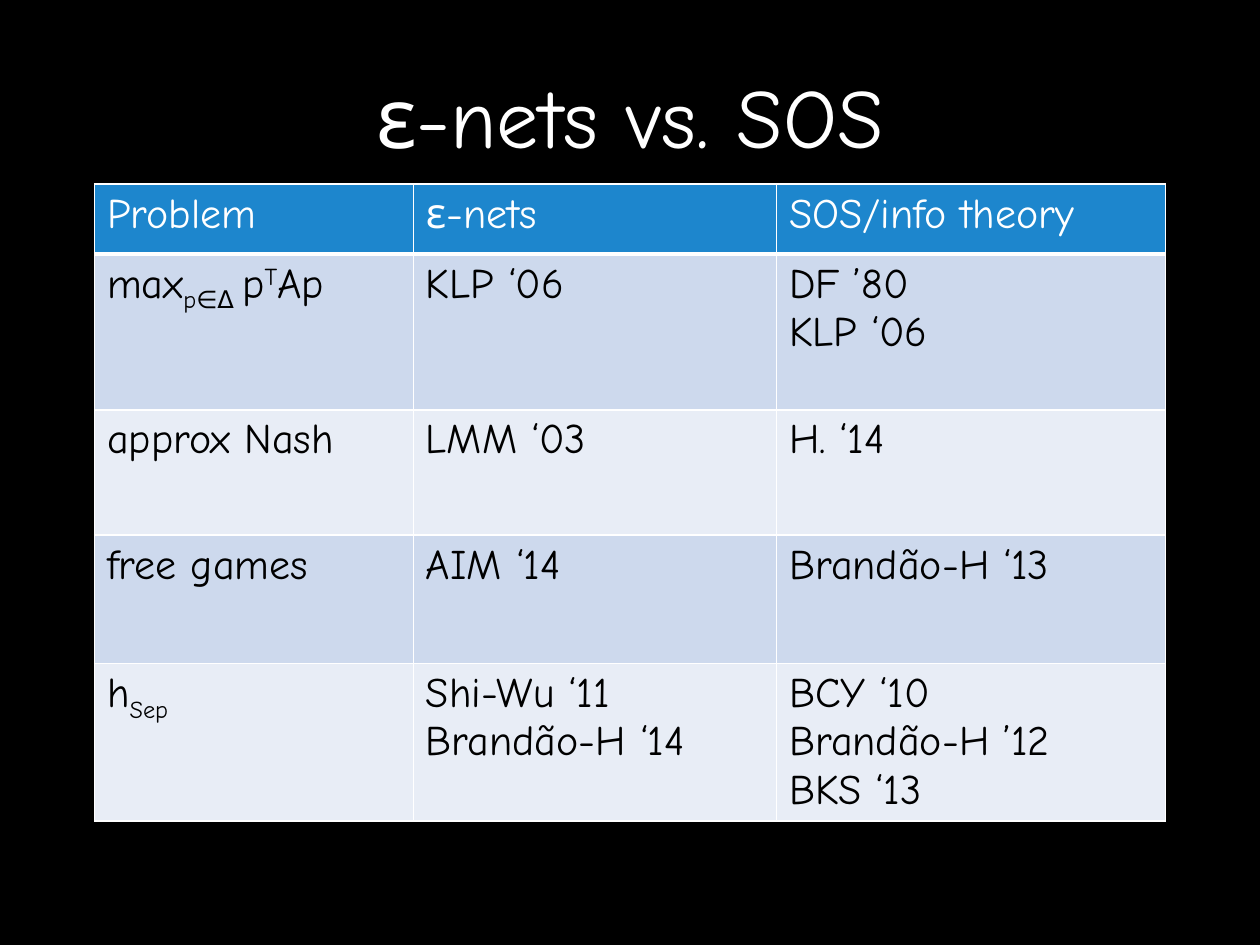
"""Build a slide comparing ε-nets with SOS in a table of problems and results."""
from lxml import etree
from pptx import Presentation
from pptx.dml.color import RGBColor
from pptx.enum import text
from pptx.oxml import ns
from pptx.util import Pt

BLACK = RGBColor(0, 0, 0)
WHITE = RGBColor(255, 255, 255)
HEADER_BLUE = RGBColor(0x1D, 0x86, 0xCD)
BAND_DARK = RGBColor(0xCD, 0xD9, 0xED)
BAND_LIGHT = RGBColor(0xE8, 0xED, 0xF6)
FONT = "Comic Neue"
SUBSCRIPT, SUPERSCRIPT = "-25000", "30000"

COLUMN_WIDTHS = [182.2, 207.6, 222.2]
ROW_HEIGHTS = [40, 89, 71.5, 73.5, 90]
ROWS = [
    ["Problem", "ε-nets", "SOS/info theory"],
    [[("max", None), ("p∈Δ ", SUBSCRIPT), ("p", None), ("T", SUPERSCRIPT), ("Ap", None)],
     "KLP ‘06", "DF ’80\vKLP ‘06"],
    ["approx Nash", "LMM ‘03", "H. ‘14"],
    ["free games", "AIM ‘14", "Brandão-H ‘13"],
    [[("h", None), ("Sep", SUBSCRIPT)],
     "Shi-Wu ‘11\vBrandão-H ‘14", "BCY ‘10\vBrandão-H ’12\vBKS ‘13"],
]


def set_font(para, size, color):
    para.font.name = FONT
    para.font.size = Pt(size)
    para.font.color.rgb = color


def add_borders(cell, bottom_width):
    properties = cell._tc.get_or_add_tcPr()
    widths = {"lnL": 1, "lnR": 1, "lnT": 1, "lnB": bottom_width}
    for position, (side, width) in enumerate(widths.items()):
        line = etree.Element(ns.qn(f"a:{side}"), w=str(Pt(width)))
        fill = etree.SubElement(line, ns.qn("a:solidFill"))
        etree.SubElement(fill, ns.qn("a:srgbClr"), val=str(WHITE))
        properties.insert(position, line)


deck = Presentation()
deck.slide_width, deck.slide_height = Pt(720), Pt(540)
page = deck.slides.add_slide(deck.slide_layouts[5])
page.background.fill.solid()
page.background.fill.fore_color.rgb = BLACK

title = page.shapes.title
title.left, title.top, title.width, title.height = Pt(54), Pt(9.5), Pt(612), Pt(112)
title.text_frame.text = "ε-nets vs. SOS"
title.text_frame.vertical_anchor = text.MSO_ANCHOR.MIDDLE
title.text_frame.paragraphs[0].alignment = text.PP_ALIGN.CENTER
set_font(title.text_frame.paragraphs[0], 48, WHITE)

table = page.shapes.add_table(
    len(ROWS), len(COLUMN_WIDTHS), Pt(54), Pt(105.2),
    Pt(sum(COLUMN_WIDTHS)), Pt(sum(ROW_HEIGHTS))).table
for column, width in zip(table.columns, COLUMN_WIDTHS):
    column.width = Pt(width)

for row_index, (contents, height) in enumerate(zip(ROWS, ROW_HEIGHTS)):
    table.rows[row_index].height = Pt(height)
    is_header = row_index == 0
    band = HEADER_BLUE if is_header else BAND_DARK if row_index % 2 else BAND_LIGHT
    for column_index, content in enumerate(contents):
        cell = table.cell(row_index, column_index)
        cell.fill.solid()
        cell.fill.fore_color.rgb = band
        add_borders(cell, 3 if is_header else 1)
        para = cell.text_frame.paragraphs[0]
        if isinstance(content, str):
            para.text = content
        else:
            for words, baseline in content:
                span = para.add_run()
                span.text = words
                if baseline:
                    span._r.get_or_add_rPr().set("baseline", baseline)
        set_font(para, 24, WHITE if is_header else BLACK)
        para.font.bold = False

deck.save("out.pptx")
